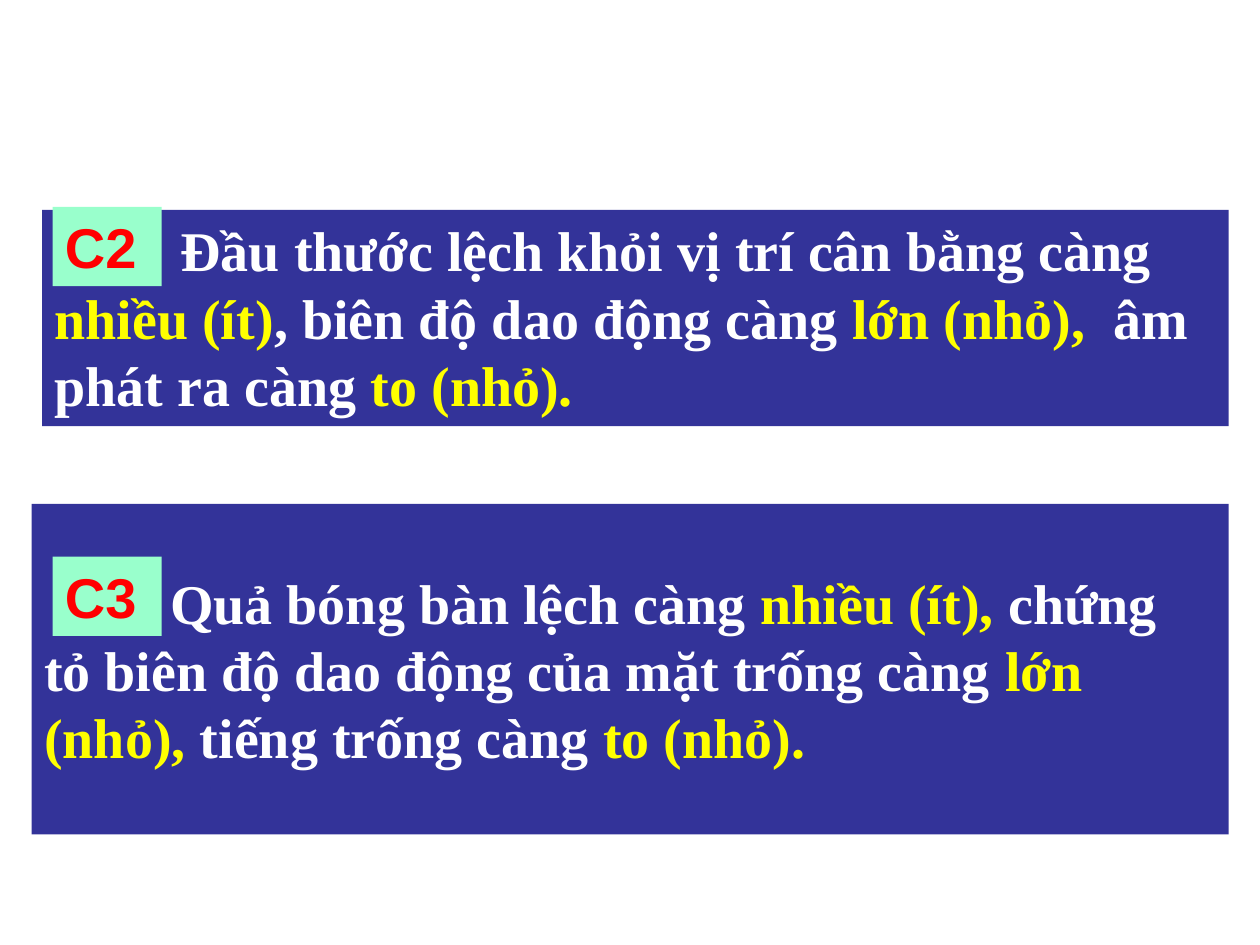
from pptx import Presentation
from pptx import util as u
from pptx.dml.color import RGBColor
from pptx.enum import shapes, text

NAVY = RGBColor(0x33, 0x33, 0x99)
MINT = RGBColor(0x99, 0xFF, 0xCC)
RED = RGBColor(0xFF, 0x00, 0x00)
WHITE = RGBColor(0xFF, 0xFF, 0xFF)
YELLOW = RGBColor(0xFF, 0xFF, 0x00)

TAG_WIDTH, TAG_HEIGHT = u.Cm(2.2), u.Cm(1.6)
FIRST_LINE_INDENT = u.Cm(2.54)


def add_block(page, left, top, width, height, fill):
    box = page.shapes.add_shape(shapes.MSO_SHAPE.RECTANGLE, left, top, width, height)
    box.shadow.inherit = False
    box.fill.solid()
    box.fill.fore_color.rgb = fill
    box.line.fill.background()
    return box


def write(box, spans, font="Times New Roman", size=32, indent=0,
          anchor=text.MSO_ANCHOR.TOP):
    """Fill the box with one paragraph made of (wording, colour) spans."""
    frame = box.text_frame
    frame.word_wrap = True
    frame.vertical_anchor = anchor
    para = frame.paragraphs[0]
    para.alignment = text.PP_ALIGN.LEFT
    if indent:
        para._p.get_or_add_pPr().set("indent", str(indent))
    for wording, colour in spans:
        span = para.add_run()
        span.text = wording
        span.font.name = font
        span.font.size = u.Pt(size)
        span.font.bold = True
        span.font.color.rgb = colour


def add_answer(page, left, top, width, height, label, spans, tag_offset,
               anchor=text.MSO_ANCHOR.TOP):
    """Place an answer panel with its question tag, offset from the panel corner."""
    panel = add_block(page, left, top, width, height, NAVY)
    write(panel, spans, indent=FIRST_LINE_INDENT, anchor=anchor)
    across, down = tag_offset
    tag = add_block(page, left + across, top + down, TAG_WIDTH, TAG_HEIGHT, MINT)
    write(tag, [(label, RED)], font="Arial", anchor=text.MSO_ANCHOR.MIDDLE)


def main():
    deck = Presentation()
    deck.slide_width, deck.slide_height = u.Cm(25.4), u.Cm(19.05)
    page = deck.slides.add_slide(deck.slide_layouts[6])

    add_answer(
        page, u.Cm(0.64), u.Cm(10.16), u.Cm(24.13), u.Cm(6.66), "C3",
        [("Quả bóng bàn lệch càng ", WHITE),
         ("nhiều (ít), ", YELLOW),
         ("chứng tỏ biên độ dao động của mặt trống càng ", WHITE),
         ("lớn (nhỏ), ", YELLOW),
         ("tiếng trống càng ", WHITE),
         ("to (nhỏ).", YELLOW)],
        tag_offset=(u.Cm(0.42), u.Cm(1.06)), anchor=text.MSO_ANCHOR.MIDDLE)

    add_answer(
        page, u.Cm(0.85), u.Cm(4.23), u.Cm(23.92), u.Cm(4.36), "C2",
        [("Đầu thước lệch khỏi vị trí cân bằng càng ", WHITE),
         ("nhiều (ít)", YELLOW),
         (", biên độ dao động càng ", WHITE),
         ("lớn (nhỏ),  ", YELLOW),
         ("âm phát ra càng ", WHITE),
         ("to (nhỏ).", YELLOW)],
        tag_offset=(u.Cm(0.21), u.Cm(-0.06)))

    deck.save("out.pptx")


if __name__ == "__main__":
    main()
